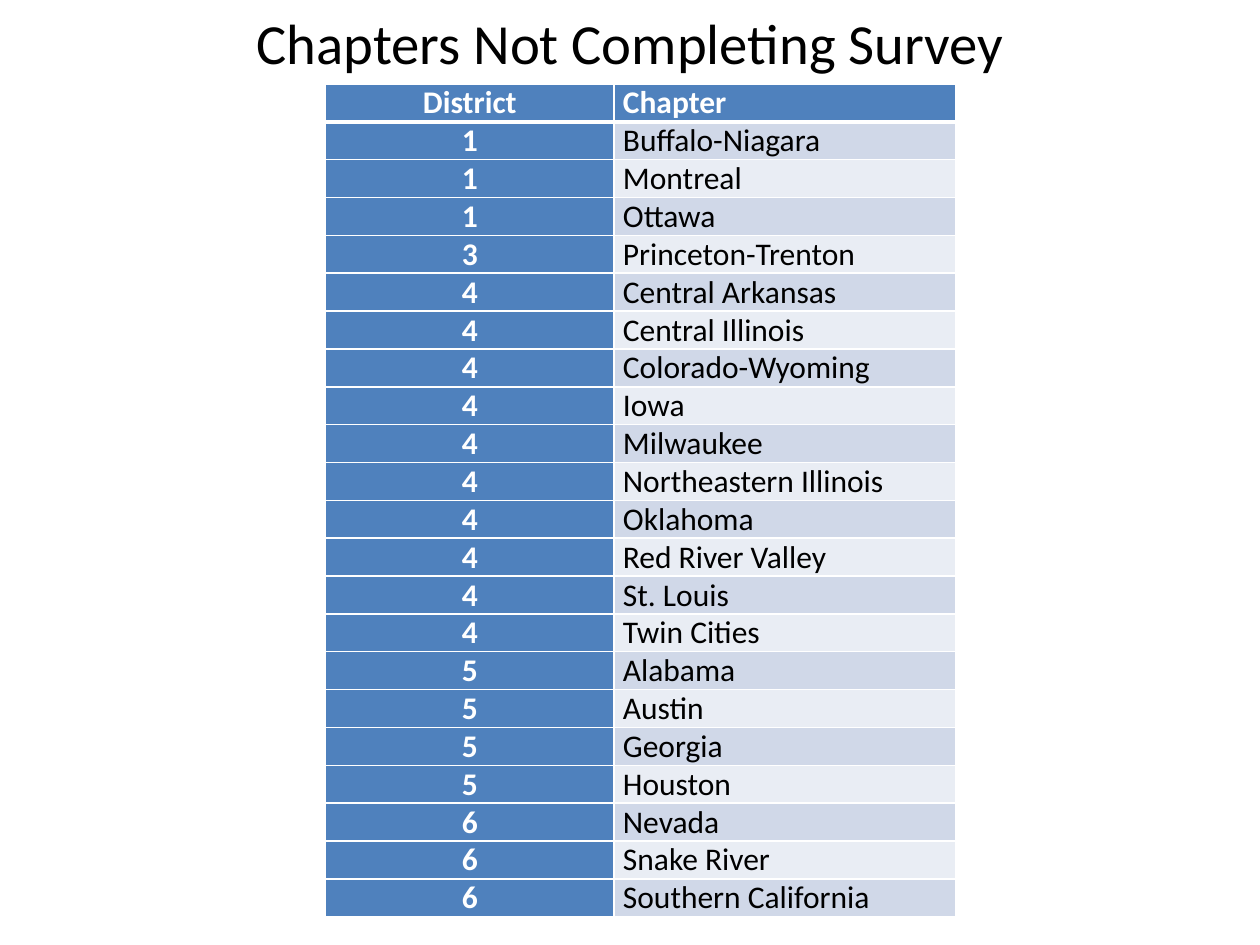
from lxml import etree
from pptx import Presentation
from pptx.dml.color import RGBColor
from pptx.enum import text
from pptx.oxml import ns
from pptx.util import Pt

COLORS = {"blue": "4F81BD", "dark": "D0D8E8", "light": "E9EDF4",
          "white": "FFFFFF", "black": "000000"}
CHAPTERS = {
    "1": ["Buffalo-Niagara", "Montreal", "Ottawa"],
    "3": ["Princeton-Trenton"],
    "4": ["Central Arkansas", "Central Illinois", "Colorado-Wyoming", "Iowa",
          "Milwaukee", "Northeastern Illinois", "Oklahoma",
          "Red River Valley", "St. Louis", "Twin Cities"],
    "5": ["Alabama", "Austin", "Georgia", "Houston"],
    "6": ["Nevada", "Snake River", "Southern California"],
}


def style(para, size, color, bold, center):
    para.font.name = "Calibri"
    para.font.size = Pt(size)
    para.font.bold = bold
    para.font.color.rgb = RGBColor.from_string(COLORS[color])
    para.alignment = text.PP_ALIGN.CENTER if center else text.PP_ALIGN.LEFT


def border(cell, side, width):
    """Draw one white side: L, R, T or B, in that order."""
    line = etree.SubElement(cell._tc.get_or_add_tcPr(), ns.qn("a:ln" + side),
                            w=str(Pt(width)))
    fill = etree.SubElement(line, ns.qn("a:solidFill"))
    etree.SubElement(fill, ns.qn("a:srgbClr"), val=COLORS["white"])


prs = Presentation()
prs.slide_width, prs.slide_height = Pt(720), Pt(540)
slide = prs.slides.add_slide(prs.slide_layouts[6])

title = slide.shapes.add_textbox(Pt(36), Pt(0), Pt(648), Pt(48))
frame = title.text_frame
frame.word_wrap = True
frame.vertical_anchor = text.MSO_ANCHOR.MIDDLE
frame.text = "Chapters Not Completing Survey"
style(frame.paragraphs[0], 32.4, "black", False, True)

rows = [("District", "Chapter")]
rows += [(area, name) for area, names in CHAPTERS.items() for name in names]
height = 21
table = slide.shapes.add_table(len(rows), 2, Pt(186), Pt(48), Pt(360),
                               Pt(height * len(rows))).table
for col, width in zip(table.columns, (165, 195)):
    col.width = Pt(width)

for r, row in enumerate(rows):
    table.rows[r].height = Pt(height)
    for c, label in enumerate(row):
        cell = table.cell(r, c)
        cell.margin_left = cell.margin_right = Pt(5)
        cell.margin_top = cell.margin_bottom = Pt(0)
        # A thick rule parts the header from the body.
        for side, width in (("L", 1), ("R", 1), ("T", 3 if r == 1 else 1),
                            ("B", 3 if r == 0 else 1)):
            border(cell, side, width)
        head = r == 0 or c == 0
        band = "blue" if head else "dark" if r % 2 else "light"
        cell.fill.solid()
        cell.fill.fore_color.rgb = RGBColor.from_string(COLORS[band])
        cell.text = label
        style(cell.text_frame.paragraphs[0], 18,
              "white" if head else "black", head, c == 0)

prs.save("out.pptx")
